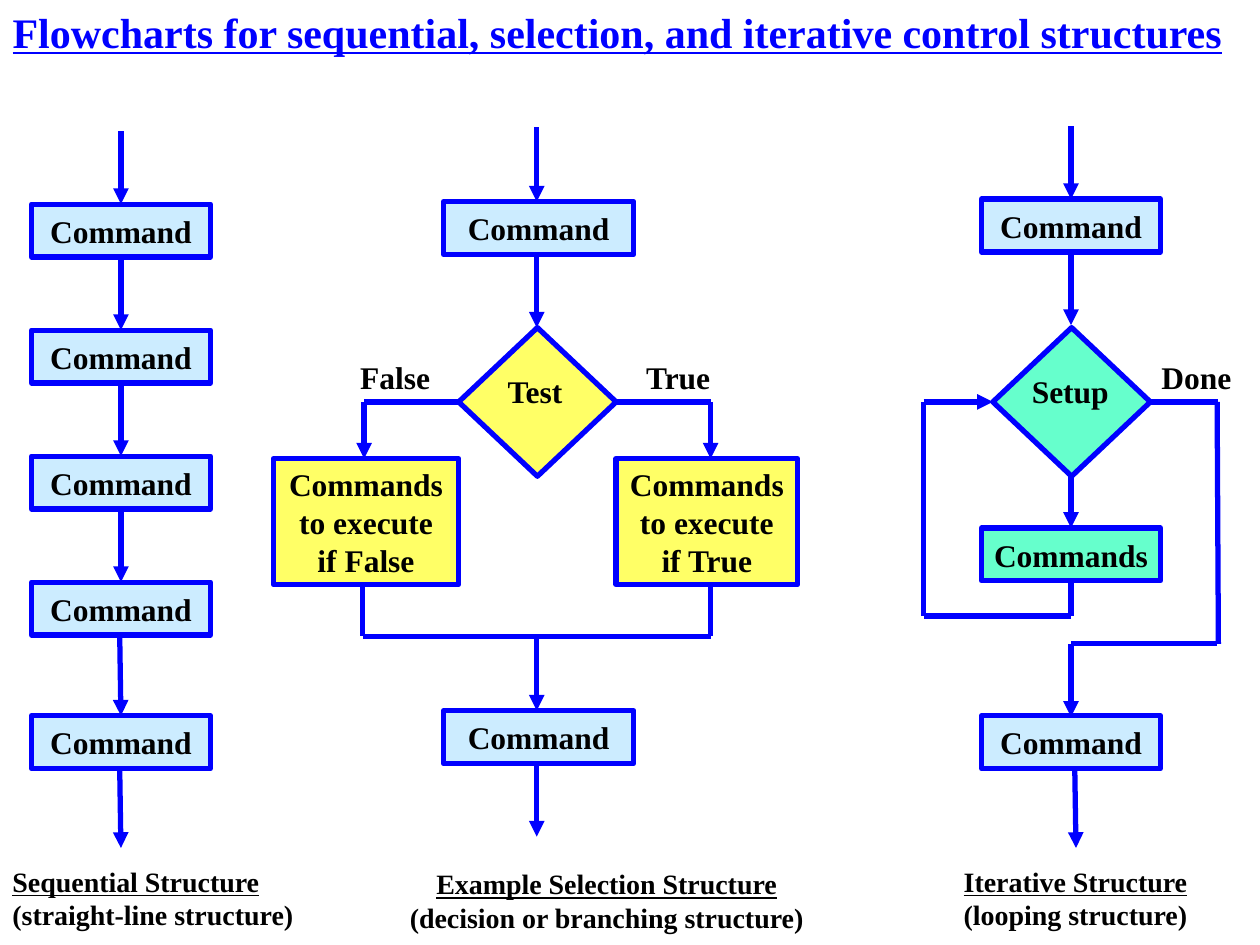
from lxml import etree
from pptx import Presentation
from pptx import util as u
from pptx.dml.color import RGBColor
from pptx.enum import shapes, text
from pptx.oxml import ns

PX = 9144


class Theme:
    font = "Times New Roman"
    blue = RGBColor.from_string("0000FF")
    black = RGBColor.from_string("000000")
    sky = RGBColor.from_string("CCECFF")
    yellow = RGBColor.from_string("FFFF66")
    mint = RGBColor.from_string("66FFCC")
    title_size = 24
    step_size = 18
    caption_size = 16
    stroke = u.Pt(3)


LEFT, CENTER = text.PP_ALIGN.LEFT, text.PP_ALIGN.CENTER
RECT, DIAMOND = shapes.MSO_SHAPE.RECTANGLE, shapes.MSO_SHAPE.DIAMOND


def write(frame, lines, size, color, align, underline_first=False):
    frame.word_wrap = False
    for index, line in enumerate(lines):
        paragraph = frame.paragraphs[0] if index == 0 else frame.add_paragraph()
        paragraph.alignment = align
        run = paragraph.add_run()
        run.text = line
        run.font.name = Theme.font
        run.font.size = u.Pt(size)
        run.font.bold = True
        run.font.underline = underline_first and index == 0
        run.font.color.rgb = color


def flow(slide, points, arrow):
    start_x, start_y, end_x, end_y = [value * PX for value in points]
    connector = slide.shapes.add_connector(
        shapes.MSO_CONNECTOR.STRAIGHT, start_x, start_y, end_x, end_y)
    connector.line.color.rgb = Theme.blue
    connector.line.width = Theme.stroke
    properties = connector.element.spPr
    if arrow:
        outline = properties.find(ns.qn("a:ln"))
        etree.SubElement(outline, ns.qn("a:tailEnd"), type="triangle")
    etree.SubElement(properties, ns.qn("a:effectLst"))


deck = Presentation()
deck.slide_width, deck.slide_height = 1000 * PX, 750 * PX
slide = deck.slides.add_slide(deck.slide_layouts[5])

title = slide.shapes.title
title.left, title.top, title.width, title.height = 0, 0, 982 * PX, 50 * PX
title.text_frame.vertical_anchor = text.MSO_ANCHOR.TOP
title.text_frame.auto_size = text.MSO_AUTO_SIZE.SHAPE_TO_FIT_TEXT
write(title.text_frame,
      ["Flowcharts for sequential, selection, and iterative control structures"],
      Theme.title_size, Theme.blue, LEFT, True)

sequence_tops = [162, 262, 362, 462, 568]
steps = [(RECT, 25, top, 142, 42, Theme.sky, ["Command"]) for top in sequence_tops]
steps += [(RECT, 352, top, 151, 42, Theme.sky, ["Command"]) for top in (160, 564)]
steps += [(RECT, 779, top, 142, 42, Theme.sky, ["Command"]) for top in (158, 568)]
steps += [
    (DIAMOND, 364, 260, 125, 118, Theme.yellow, []),
    (RECT, 217, 364, 147, 100, Theme.yellow, ["Commands", "to execute", "if False"]),
    (RECT, 489, 364, 144, 100, Theme.yellow, ["Commands", "to execute", "if True"]),
    (DIAMOND, 788, 260, 125, 118, Theme.mint, []),
    (RECT, 779, 419, 142, 42, Theme.mint, ["Commands"]),
]
for kind, left, top, width, height, fill, lines in steps:
    step = slide.shapes.add_shape(kind, left * PX, top * PX, width * PX, height * PX)
    step.shadow.inherit = False
    step.fill.solid()
    step.fill.fore_color.rgb = fill
    step.line.color.rgb = Theme.blue
    step.line.width = Theme.stroke
    step.text_frame.vertical_anchor = text.MSO_ANCHOR.MIDDLE
    write(step.text_frame, lines, Theme.step_size, Theme.black, CENTER)

arrows = [(96, top - 58, 96, top) for top in sequence_tops[:4]]
arrows += [(95, 504, 96, 568), (95, 610, 96, 673)]
arrows += [(426, start, 426, start + 59) for start in (101, 201, 505, 605)]
arrows += [(branch, 319, branch, 364) for branch in (289, 564)]
arrows += [(850, start, 850, start + 58) for start in (100, 200, 511)]
arrows += [(850, 378, 850, 419), (733, 319, 788, 319), (853, 610, 854, 673)]

selection_lines = [
    (289, 319, 364, 319), (489, 319, 564, 319),
    (288, 464, 288, 505), (564, 464, 564, 505), (288, 505, 564, 505),
]
loop_lines = [(850, 461, 850, 489), (733, 489, 850, 489), (733, 319, 733, 489)]
exit_lines = [(912, 319, 967, 319), (966, 319, 967, 511), (850, 511, 966, 511)]

for points in arrows:
    flow(slide, points, True)
for points in selection_lines + loop_lines + exit_lines:
    flow(slide, points, False)

labels = [
    (393, 290, 66, 40, ["Test"], LEFT),
    (276, 279, 76, 40, ["False"], LEFT),
    (503, 279, 73, 40, ["True"], LEFT),
    (809, 290, 81, 40, ["Setup"], LEFT),
    (912, 279, 76, 40, ["Done"], LEFT),
    (0, 681, 245, 64, ["Sequential Structure", "(straight-line structure)"], LEFT),
    (314, 683, 335, 64,
     ["Example Selection Structure", "(decision or branching structure)"], CENTER),
    (755, 681, 199, 64, ["Iterative Structure", "(looping structure)"], LEFT),
]
for left, top, width, height, lines, align in labels:
    label = slide.shapes.add_textbox(left * PX, top * PX, width * PX, height * PX)
    label.text_frame.auto_size = text.MSO_AUTO_SIZE.SHAPE_TO_FIT_TEXT
    is_caption = len(lines) > 1
    size = Theme.caption_size if is_caption else Theme.step_size
    write(label.text_frame, lines, size, Theme.black, align, is_caption)

deck.save("out.pptx")
